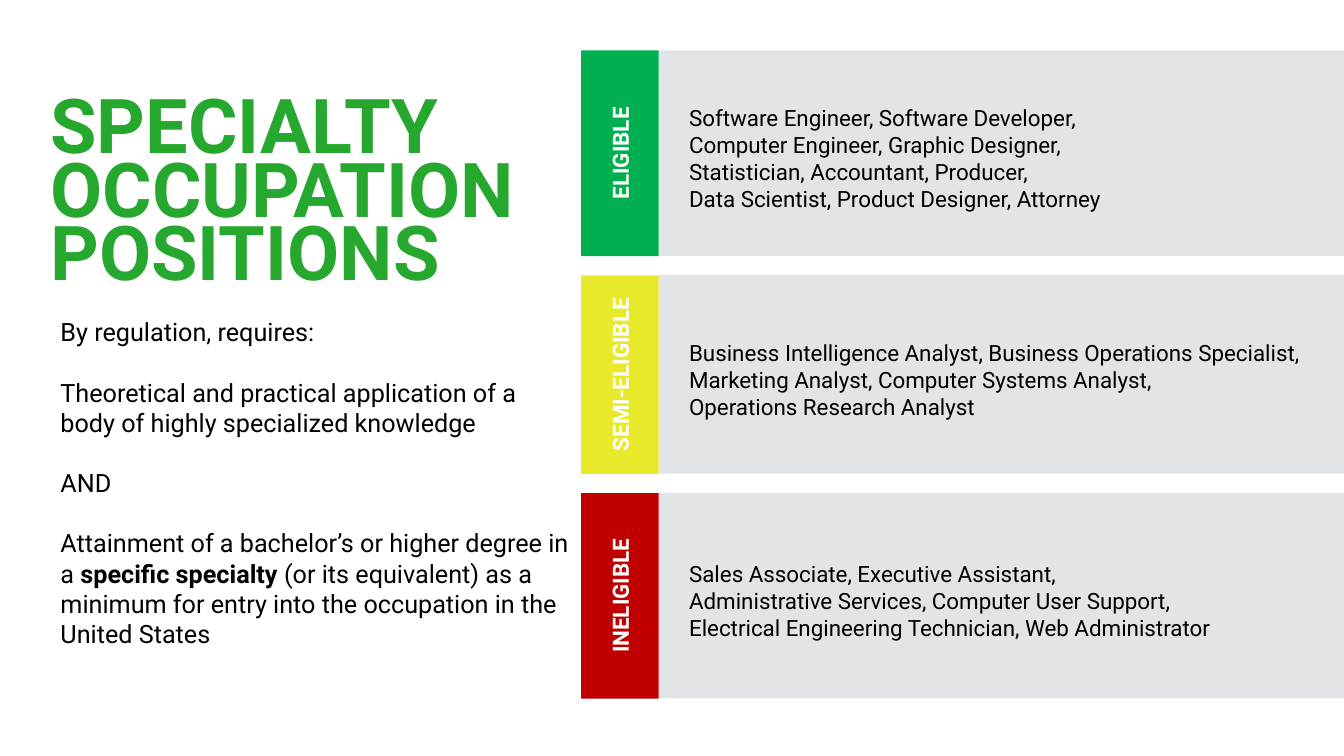
from dataclasses import dataclass

from lxml import etree
from pptx import Presentation
from pptx.dml.color import RGBColor
from pptx.enum.shapes import MSO_SHAPE
from pptx.enum.text import MSO_ANCHOR, MSO_AUTO_SIZE, PP_ALIGN
from pptx.oxml.ns import qn
from pptx.shapes.autoshape import Shape
from pptx.slide import Slide
from pptx.text.text import TextFrame, _Paragraph
from pptx.util import Pt

RECTANGLE = MSO_SHAPE.RECTANGLE
TOP, MIDDLE = MSO_ANCHOR.TOP, MSO_ANCHOR.MIDDLE
LEFT, CENTER = PP_ALIGN.LEFT, PP_ALIGN.CENTER
NO_AUTOFIT = MSO_AUTO_SIZE.NONE


@dataclass(frozen=True)
class Theme:
    font: str = "Roboto"
    title_color: str = "26A72D"
    text_color: str = "000000"
    label_color: str = "FFFFFF"
    panel_color: str = "DFE3E5"
    panel_opacity: int = 90
    title_size: float = 54
    body_size: float = 18
    panel_size: float = 16


@dataclass(frozen=True)
class Box:
    left: float
    top: float
    width: float
    height: float


@dataclass(frozen=True)
class Category:
    label: str
    color: str
    height: float
    lines: tuple[str, ...]


@dataclass(frozen=True)
class TextPart:
    text: str
    bold: bool = False


THEME = Theme()
SLIDE_WIDTH, SLIDE_HEIGHT = 960, 540
TITLE_BOX = Box(36, 66.2, 380.2, 146.9)
BODY_BOX = Box(36, 222.5, 378.7, 247)
BODY_GAP = 21.5
LABEL_LEFT, LABEL_WIDTH = 415.2, 55.4
FIRST_TOP, CATEGORY_GAP = 36, 13.7

REQUIREMENTS = (
    (TextPart("By regulation, requires:"),),
    (TextPart("Theoretical and practical application of a body of highly specialized knowledge"),),
    (TextPart("AND"),),
    (
        TextPart("Attainment of a bachelor’s or higher degree in a "),
        TextPart("specific specialty ", bold=True),
        TextPart("(or its equivalent) as a minimum for entry into the occupation in the United States"),
    ),
)

CATEGORIES = (
    Category("ELIGIBLE", "00B050", 146.9, (
        "Software Engineer, Software Developer,",
        "Computer Engineer, Graphic Designer,",
        "Statistician, Accountant, Producer,",
        "Data Scientist, Product Designer, Attorney",
    )),
    Category("SEMI-ELIGIBLE", "E9E92B", 141.8, (
        "Business Intelligence Analyst, Business Operations Specialist, "
        "Marketing Analyst, Computer Systems Analyst,",
        "Operations Research Analyst",
    )),
    Category("INELIGIBLE", "C00000", 146.9, (
        "Sales Associate, Executive Assistant,",
        "Administrative Services, Computer User Support,",
        "Electrical Engineering Technician, Web Administrator",
    )),
)


def place(shape: Shape, box: Box) -> None:
    shape.left, shape.top = Pt(box.left), Pt(box.top)
    shape.width, shape.height = Pt(box.width), Pt(box.height)


def set_frame(frame: TextFrame, anchor: MSO_ANCHOR, left: float = 0, top: float = 0,
              right: float = 0, bottom: float = 0) -> None:
    frame.word_wrap = True
    frame.auto_size = NO_AUTOFIT
    frame.vertical_anchor = anchor
    frame.margin_left, frame.margin_top = Pt(left), Pt(top)
    frame.margin_right, frame.margin_bottom = Pt(right), Pt(bottom)


def style(paragraph: _Paragraph, size: float, color: str, bold: bool = False,
          alignment: PP_ALIGN = LEFT) -> None:
    paragraph.alignment = alignment
    paragraph.font.name = THEME.font
    paragraph.font.size = Pt(size)
    paragraph.font.bold = bold
    paragraph.font.color.rgb = RGBColor.from_string(color)


def remove_bullet(paragraph: _Paragraph) -> None:
    properties = paragraph._p.get_or_add_pPr()
    properties.set("marL", "0")
    properties.set("indent", "0")
    etree.SubElement(properties, qn("a:buNone"))


def add_rectangle(slide: Slide, box: Box, color: str) -> Shape:
    shape = slide.shapes.add_shape(
        RECTANGLE, Pt(box.left), Pt(box.top), Pt(box.width), Pt(box.height))
    shape.shadow.inherit = False
    shape.fill.solid()
    shape.fill.fore_color.rgb = RGBColor.from_string(color)
    shape.line.fill.background()
    return shape


def set_opacity(shape: Shape, percent: int) -> None:
    color = shape._element.spPr.find(f"{qn('a:solidFill')}/{qn('a:srgbClr')}")
    etree.SubElement(color, qn("a:alpha")).set("val", str(percent * 1000))


def fill_title(slide: Slide) -> None:
    title = slide.shapes.title
    place(title, TITLE_BOX)
    set_frame(title.text_frame, MIDDLE, top=3.6)
    title.text_frame.text = "SPECIALTY OCCUPATION POSITIONS"
    paragraph = title.text_frame.paragraphs[0]
    paragraph.line_spacing = 0.7
    style(paragraph, THEME.title_size, THEME.title_color, bold=True)


def fill_requirements(slide: Slide) -> None:
    body = slide.placeholders[1]
    place(body, BODY_BOX)
    frame = body.text_frame
    set_frame(frame, TOP, 7.2, 3.6, 7.2, 3.6)
    for index, parts in enumerate(REQUIREMENTS):
        paragraph = frame.add_paragraph() if index else frame.paragraphs[0]
        paragraph.space_before = Pt(BODY_GAP if index else 0)
        remove_bullet(paragraph)
        style(paragraph, THEME.body_size, THEME.text_color)
        for part in parts:
            run = paragraph.add_run()
            run.text = part.text
            if part.bold:
                run.font.bold = True


def add_category(slide: Slide, category: Category, top: float) -> None:
    # Grey panel with the job titles
    panel_left = LABEL_LEFT + LABEL_WIDTH
    panel = add_rectangle(
        slide, Box(panel_left, top, SLIDE_WIDTH - panel_left, category.height), THEME.panel_color)
    set_opacity(panel, THEME.panel_opacity)
    set_frame(panel.text_frame, MIDDLE, left=21.6, top=7.2, right=21.6)
    panel.text_frame.text = "\v".join(category.lines)
    style(panel.text_frame.paragraphs[0], THEME.panel_size, THEME.text_color)

    # Coloured label, turned to read upwards
    offset = (category.height - LABEL_WIDTH) / 2
    label = add_rectangle(
        slide, Box(LABEL_LEFT - offset, top + offset, category.height, LABEL_WIDTH), category.color)
    label.rotation = 270
    set_frame(label.text_frame, MIDDLE)
    label.text_frame.text = category.label
    style(label.text_frame.paragraphs[0], THEME.panel_size, THEME.label_color, True, CENTER)


def main() -> None:
    presentation = Presentation()
    presentation.slide_width, presentation.slide_height = Pt(SLIDE_WIDTH), Pt(SLIDE_HEIGHT)
    slide = presentation.slides.add_slide(presentation.slide_layouts[1])

    # Left column
    fill_title(slide)
    fill_requirements(slide)

    # Right column, stacked with equal gaps
    top = FIRST_TOP
    for category in CATEGORIES:
        add_category(slide, category, top)
        top += category.height + CATEGORY_GAP

    presentation.save("out.pptx")


if __name__ == "__main__":
    main()
